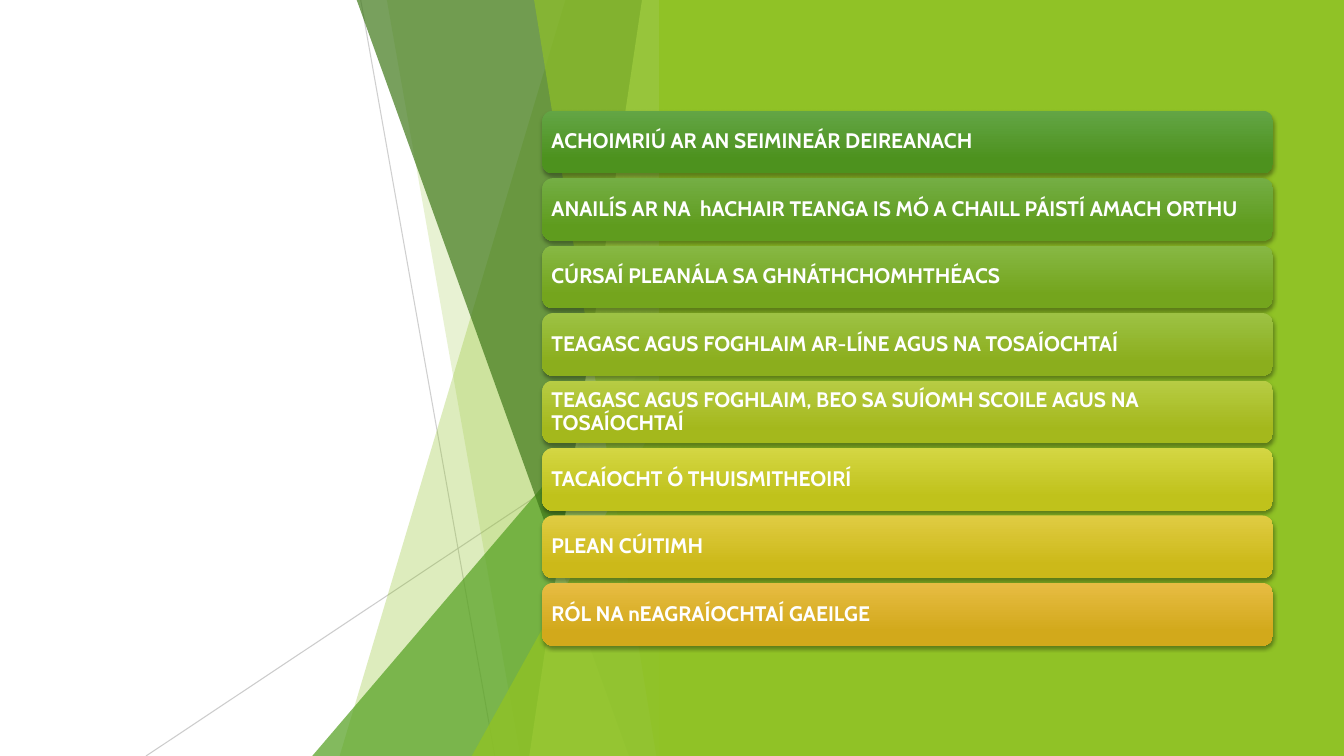
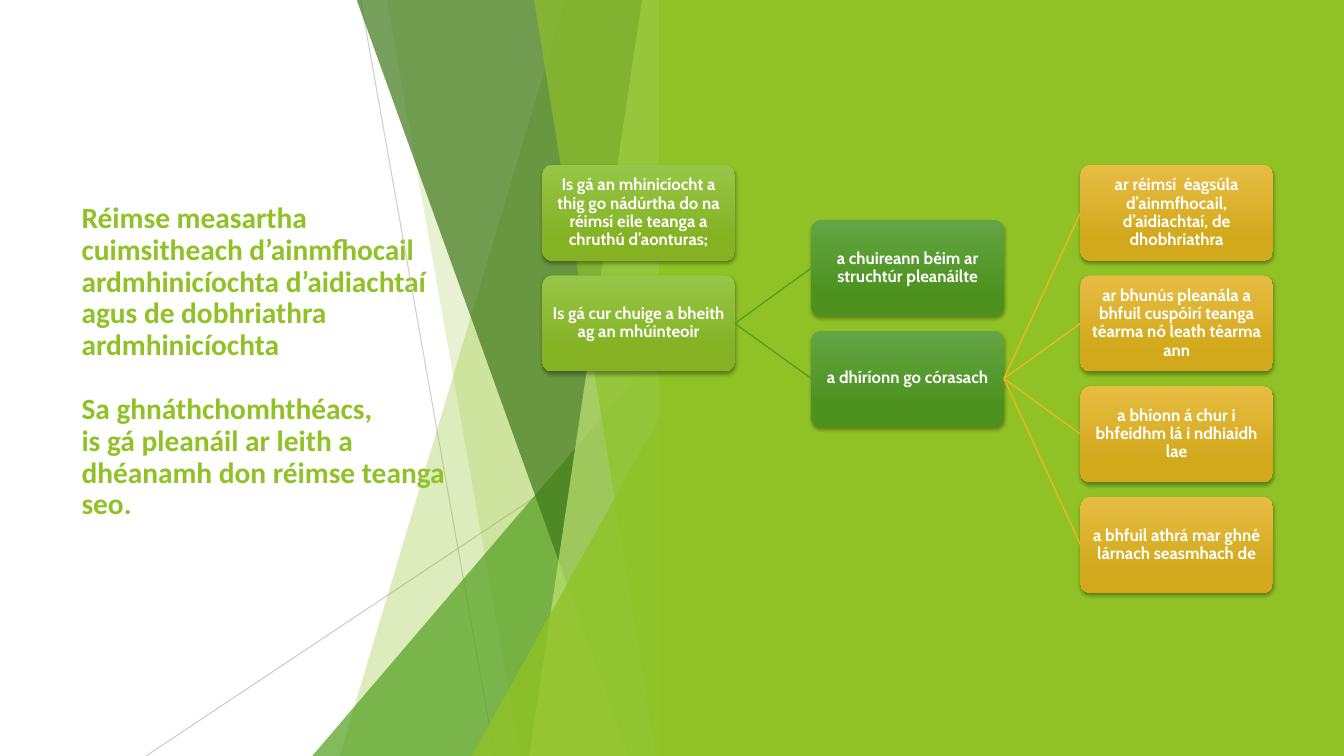
from lxml.etree import SubElement
from pptx import Presentation
from pptx.dml.color import RGBColor
from pptx.enum.shapes import MSO_CONNECTOR as CONN, MSO_SHAPE as SHAPE
from pptx.enum.text import MSO_ANCHOR, MSO_AUTO_SIZE, PP_ALIGN
from pptx.oxml.ns import qn
from pptx.util import Cm, Pt

SLIDE_W, SLIDE_H = 33.87, 19.05
FACET_RIGHT = 16.92
PANEL_LEFT = 16.61
CONTENT_LEFT = 13.67
BODY_FONT, TITLE_FONT = "Cabin", "Calibri"

WHITE = RGBColor(0xFF, 0xFF, 0xFF)
GREY = RGBColor(0xBF, 0xBF, 0xBF)
LIME = RGBColor(0x90, 0xC2, 0x26)
PALE_LIME = RGBColor(0xC0, 0xE4, 0x74)
GREEN = RGBColor(0x54, 0xA0, 0x21)
DARK_GREEN = RGBColor(0x3F, 0x78, 0x19)
GOLD = RGBColor(0xE6, 0xB9, 0x1E)

GREEN_SHADE = (RGBColor(0x63, 0xA5, 0x45), RGBColor(0x4D, 0x92, 0x1E))
LIME_SHADE = (RGBColor(0x97, 0xC5, 0x47), RGBColor(0x84, 0xB2, 0x23))
GOLD_SHADE = (RGBColor(0xE7, 0xBC, 0x43), RGBColor(0xD2, 0xA9, 0x1B))

AGENDA = [
    ("ACHOIMRIÚ AR AN SEIMINEÁR DEIREANACH", GREEN_SHADE),
    ("ANAILÍS AR NA  hACHAIR TEANGA IS MÓ A CHAILL PÁISTÍ AMACH ORTHU",
     (RGBColor(0x74, 0xAE, 0x44), RGBColor(0x5F, 0x9C, 0x1E))),
    ("CÚRSAÍ PLEANÁLA SA GHNÁTHCHOMHTHÉACS",
     (RGBColor(0x87, 0xB8, 0x44), RGBColor(0x74, 0xA5, 0x1D))),
    ("TEAGASC AGUS FOGHLAIM AR-LÍNE AGUS NA TOSAÍOCHTAÍ",
     (RGBColor(0x9D, 0xC2, 0x44), RGBColor(0x8B, 0xAE, 0x1D))),
    ("TEAGASC AGUS FOGHLAIM, BEO SA SUÍOMH SCOILE AGUS NA TOSAÍOCHTAÍ",
     (RGBColor(0xB7, 0xCC, 0x44), RGBColor(0xA4, 0xB8, 0x1C))),
    ("TACAÍOCHT Ó THUISMITHEOIRÍ",
     (RGBColor(0xD4, 0xD6, 0x43), RGBColor(0xC0, 0xC2, 0x1B))),
    ("PLEAN CÚITIMH",
     (RGBColor(0xE0, 0xCC, 0x43), RGBColor(0xCC, 0xB9, 0x19))),
    ("RÓL NA nEAGRAÍOCHTAÍ GAEILGE", GOLD_SHADE),
]

TITLE = [
    ["Réimse measartha cuimsitheach d’ainmfhocail ardmhinicíochta "
     "d’aidiachtaí agus de dobhriathra ardmhinicíochta"],
    ["Sa ghnáthchomhthéacs,",
     "is gá pleanáil ar leith a dhéanamh don réimse teanga seo."],
]

APPROACH = [
    "Is gá an mhinicíocht a thig go nádúrtha do na réimsí eile teanga "
    "a chruthú d’aonturas;",
    "Is gá cur chuige a bheith ag an mhúinteoir",
]
FOCUS = ["a chuireann béim ar struchtúr pleanáilte", "a dhíríonn go córasach"]
DETAIL = [
    "ar réimsí  éagsúla d’ainmfhocail, d’aidiachtaí, de dhobhriathra",
    "ar bhunús pleanála a bhfuil cuspóirí teanga téarma nó leath téarma ann",
    "a bhíonn á chur i bhfeidhm lá i ndhiaidh lae",
    "a bhfuil athrá mar ghné lárnach seasmhach de",
]


def set_alpha(sp, percent):
    """Make the colour of a shape or line partly transparent."""
    for clr in sp.element.spPr.iter(qn("a:srgbClr")):
        SubElement(clr, qn("a:alpha"), val=str(percent * 1000))


def paint(sp, color, alpha=100):
    """Give a shape a flat fill with no line and no shadow."""
    sp.shadow.inherit = False
    sp.fill.solid()
    sp.fill.fore_color.rgb = color
    sp.line.fill.background()
    if alpha < 100:
        set_alpha(sp, alpha)


def add_line(s, color, width, start=(0, 0), end=(0, 0)):
    """Add a straight line without a shadow."""
    cxn = s.shapes.add_connector(CONN.STRAIGHT, *map(Cm, start + end))
    cxn.line.color.rgb = color
    cxn.line.width = Pt(width)
    SubElement(cxn.element.spPr, qn("a:effectLst"))
    return cxn


def add_facet(s, top_x, bottom_x, color, alpha):
    """Add a full-height facet with a slanted left edge."""
    fb = s.shapes.build_freeform(Cm(top_x), 0)
    corners = [(FACET_RIGHT, 0), (FACET_RIGHT, SLIDE_H), (bottom_x, SLIDE_H)]
    fb.add_line_segments([(Cm(x), Cm(y)) for x, y in corners])
    paint(fb.convert_to_shape(), color, alpha)


def add_wedge(s, left, top, color, alpha):
    """Add a right-angled triangle standing in the facets' lower right corner."""
    sp = s.shapes.add_shape(SHAPE.ISOSCELES_TRIANGLE, Cm(left), Cm(top),
                            Cm(FACET_RIGHT - left), Cm(SLIDE_H - top))
    sp.adjustments[0] = 1
    paint(sp, color, alpha)


def add_backdrop(s):
    """Draw the facets and the lime panel that the slides share."""
    set_alpha(add_line(s, GREY, 0.75, (9.09, 0), (12.47, SLIDE_H)), 75)
    set_alpha(add_line(s, GREY, 0.75, (FACET_RIGHT, 10.24), (3.68, SLIDE_H)), 80)
    add_facet(s, 14.25, 8.56, LIME, 30)
    add_facet(s, 9.75, 13.11, LIME, 20)
    add_wedge(s, 7.87, 8.46, GREEN, 72)
    add_facet(s, 8.99, 15.85, DARK_GREEN, 70)
    add_facet(s, 16.18, 13.34, PALE_LIME, 70)
    add_facet(s, 13.46, 16.54, LIME, 65)
    add_wedge(s, 11.89, 9.98, LIME, 80)
    panel = s.shapes.add_shape(SHAPE.RECTANGLE, Cm(PANEL_LEFT), 0,
                               Cm(SLIDE_W - PANEL_LEFT), Cm(SLIDE_H))
    paint(panel, LIME)


def add_shadow(sp):
    """Give a shape a soft shadow below it."""
    sp.shadow.inherit = False
    effects = sp.element.spPr.find(qn("a:effectLst"))
    shadow = SubElement(effects, qn("a:outerShdw"), blurRad=str(Pt(3)),
                        dist=str(Pt(2)), dir="5400000", rotWithShape="0")
    clr = SubElement(shadow, qn("a:srgbClr"), val="000000")
    SubElement(clr, qn("a:alpha"), val="35000")


def format_run(r, font, size, color):
    """Set the bold font of a run."""
    r.font.name, r.font.size, r.font.bold = font, Pt(size), True
    r.font.color.rgb = color


def add_card(s, box, text, shade, size, inset, align):
    """Add a shaded rounded card with white text."""
    sp = s.shapes.add_shape(SHAPE.ROUNDED_RECTANGLE, *map(Cm, box))
    sp.fill.gradient()
    sp.fill.gradient_angle = 270
    for stop, position, color in zip(sp.fill.gradient_stops, (0, 0.78), shade):
        stop.position, stop.color.rgb = position, color
    sp.line.fill.background()
    add_shadow(sp)
    tf = sp.text_frame
    tf.word_wrap = True
    tf.vertical_anchor = MSO_ANCHOR.MIDDLE
    tf.margin_left = tf.margin_right = tf.margin_top = tf.margin_bottom = Cm(inset)
    p = tf.paragraphs[0]
    p.alignment, p.line_spacing = align, 0.9
    r = p.add_run()
    r.text = text
    format_run(r, BODY_FONT, size, WHITE)
    return sp


def add_column(s, index, top, texts, shade):
    """Add one column of the tree and return its cards."""
    width, height, column_pitch, row_pitch = 4.85, 2.42, 6.78, 2.79
    cards = []
    for i, text in enumerate(texts):
        box = (CONTENT_LEFT + index * column_pitch, top + i * row_pitch, width, height)
        card = add_card(s, box, text, shade, 12, 0.03, PP_ALIGN.CENTER)
        card.adjustments[0] = 0.1
        cards.append(card)
    return cards


def add_branches(s, parent, children, color):
    """Join a card to each of its children."""
    for child in children:
        cxn = add_line(s, color, 1)
        cxn.begin_connect(parent, 3)
        cxn.end_connect(child, 1)


def set_title(s, paragraphs):
    """Place and fill the title at the left of the slide."""
    title = s.shapes.title
    title.left, title.top, title.width, title.height = map(Cm, (1.8, 3.44, 9.86, 11.38))
    tf = title.text_frame
    tf.word_wrap = True
    tf.auto_size = MSO_AUTO_SIZE.NONE
    tf.vertical_anchor = MSO_ANCHOR.MIDDLE
    for i, lines in enumerate(paragraphs):
        p = tf.add_paragraph() if i else tf.paragraphs[0]
        p.alignment, p.line_spacing = PP_ALIGN.LEFT, 0.9
        p.space_before = Pt(23 if i else 0)
        for j, line in enumerate(lines):
            if j:
                p.add_line_break()
            r = p.add_run()
            r.text = line
            format_run(r, TITLE_FONT, 21, LIME)


def build_agenda(prs):
    """Build the slide that lists the topics."""
    s = prs.slides.add_slide(prs.slide_layouts[6])
    add_backdrop(s)
    for i, (text, shade) in enumerate(AGENDA):
        box = (CONTENT_LEFT, 2.79 + i * 1.7, 18.41, 1.58)
        add_card(s, box, text, shade, 15, 0.15, PP_ALIGN.LEFT)


def build_tree(prs):
    """Build the slide with the title and the planning tree."""
    s = prs.slides.add_slide(prs.slide_layouts[5])
    set_title(s, TITLE)
    add_backdrop(s)
    approach = add_column(s, 0, 4.15, APPROACH, LIME_SHADE)
    focus = add_column(s, 1, 5.54, FOCUS, GREEN_SHADE)
    detail = add_column(s, 2, 4.15, DETAIL, GOLD_SHADE)
    add_branches(s, approach[-1], focus, GREEN)
    add_branches(s, focus[-1], detail, GOLD)


def main():
    """Build and save the presentation."""
    prs = Presentation()
    prs.slide_width, prs.slide_height = Cm(SLIDE_W), Cm(SLIDE_H)
    build_agenda(prs)
    build_tree(prs)
    prs.save("out.pptx")


if __name__ == "__main__":
    main()
